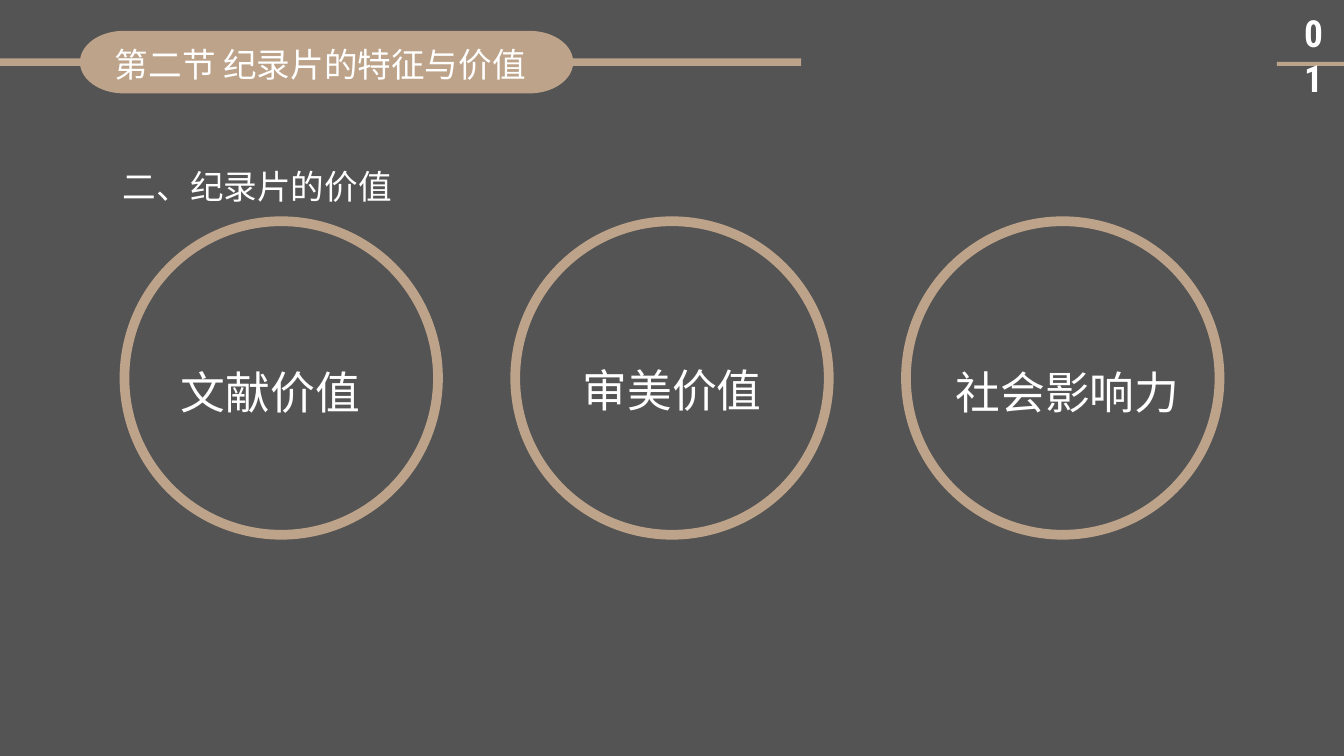
"""Build a slide on the value of documentary films with three ringed headings."""
from math import cos, pi, sin

from lxml.etree import SubElement
from pptx import Presentation
from pptx.dml.color import RGBColor
from pptx.enum.shapes import MSO_SHAPE
from pptx.enum.text import MSO_ANCHOR, MSO_AUTO_SIZE, PP_ALIGN
from pptx.oxml.ns import qn
from pptx.util import Inches, Pt

GREY = RGBColor(0x54, 0x54, 0x54)
TAN = RGBColor(0xBD, 0xA3, 0x89)
WHITE = RGBColor(0xFF, 0xFF, 0xFF)
CHINESE_FONT = "Noto Sans CJK SC"
NUMBER_FONT = "Roboto Condensed"


def paint(shape):
    shape.shadow.inherit = False
    shape.fill.solid()
    shape.fill.fore_color.rgb = TAN
    shape.line.fill.background()


def write(shape, text, size, font_name=CHINESE_FONT, bold=False, inset=0.0, spacing=1.0):
    frame = shape.text_frame
    frame_format = {
        "word_wrap": True,
        "auto_size": MSO_AUTO_SIZE.SHAPE_TO_FIT_TEXT,
        "vertical_anchor": MSO_ANCHOR.TOP,
        "margin_left": Inches(inset),
        "margin_right": Inches(inset),
        "margin_top": Inches(inset / 2),
        "margin_bottom": Inches(inset / 2),
    }
    for name, value in frame_format.items():
        setattr(frame, name, value)
    paragraph = frame.paragraphs[0]
    paragraph.alignment = PP_ALIGN.LEFT
    paragraph.line_spacing = spacing
    run = paragraph.add_run()
    run.text = text
    for name, value in {"size": Pt(size), "name": font_name, "bold": bold}.items():
        setattr(run.font, name, value)
    run.font.color.rgb = WHITE
    SubElement(run.font._element, qn("a:ea"), typeface=font_name)


presentation = Presentation()
presentation.slide_width = Inches(20)
presentation.slide_height = Inches(11.25)
slide = presentation.slides.add_slide(presentation.slide_layouts[5])
slide.background.fill.solid()
slide.background.fill.fore_color.rgb = GREY
shapes = slide.shapes

subtitle = shapes.add_textbox(Inches(1.83), Inches(2.17), Inches(16.17), Inches(1.64))
write(subtitle, "二、纪录片的价值", 36, spacing=1.5)

for box in [(19, 0.92, 1, 0.06), (-0.03, 0.87, 11.95, 0.11)]:
    paint(shapes.add_shape(MSO_SHAPE.RECTANGLE, *map(Inches, box)))

page_number = shapes.add_textbox(Inches(19.31), Inches(0.1), Inches(0.67), Inches(0.77))
write(page_number, "01", 40, NUMBER_FONT, bold=True, inset=0.1)

STEPS = 40
pill_points = []
for center_x, start in [(7.88, -pi / 2), (1.84, pi / 2)]:
    for step in range(STEPS + 1):
        angle = start + pi * step / STEPS
        pill_points.append((Inches(center_x + 0.65 * cos(angle)), Inches(0.925 + 0.465 * sin(angle))))
builder = shapes.build_freeform(*pill_points[0], scale=1.0)
builder.add_line_segments(pill_points[1:], close=True)
paint(builder.convert_to_shape())

title = shapes.title
title_box = {"left": 1.61, "top": 0.6, "width": 6.39, "height": 0.71}
for name, value in title_box.items():
    setattr(title, name, Inches(value))
write(title, "第二节 纪录片的特征与价值", 36, inset=0.1)
title.element.getparent().append(title.element)

RING_SIZE = 4.81
values = [
    ("文献价值", 2.69, 5.02, 2.99),
    ("审美价值", 8.67, 4.99, 2.97),
    ("社会影响力", 14.22, 5.02, 3.61),
]
for index, (text, left, top, width) in enumerate(values):
    ring = shapes.add_shape(
        MSO_SHAPE.DONUT, Inches(1.78 + 5.815 * index), Inches(3.22), Inches(RING_SIZE), Inches(RING_SIZE)
    )
    ring.adjustments[0] = 0.03
    paint(ring)
    label = shapes.add_textbox(Inches(left), Inches(top), Inches(width), Inches(1.21))
    write(label, text, 48, spacing=1.5)

presentation.save("out.pptx")
